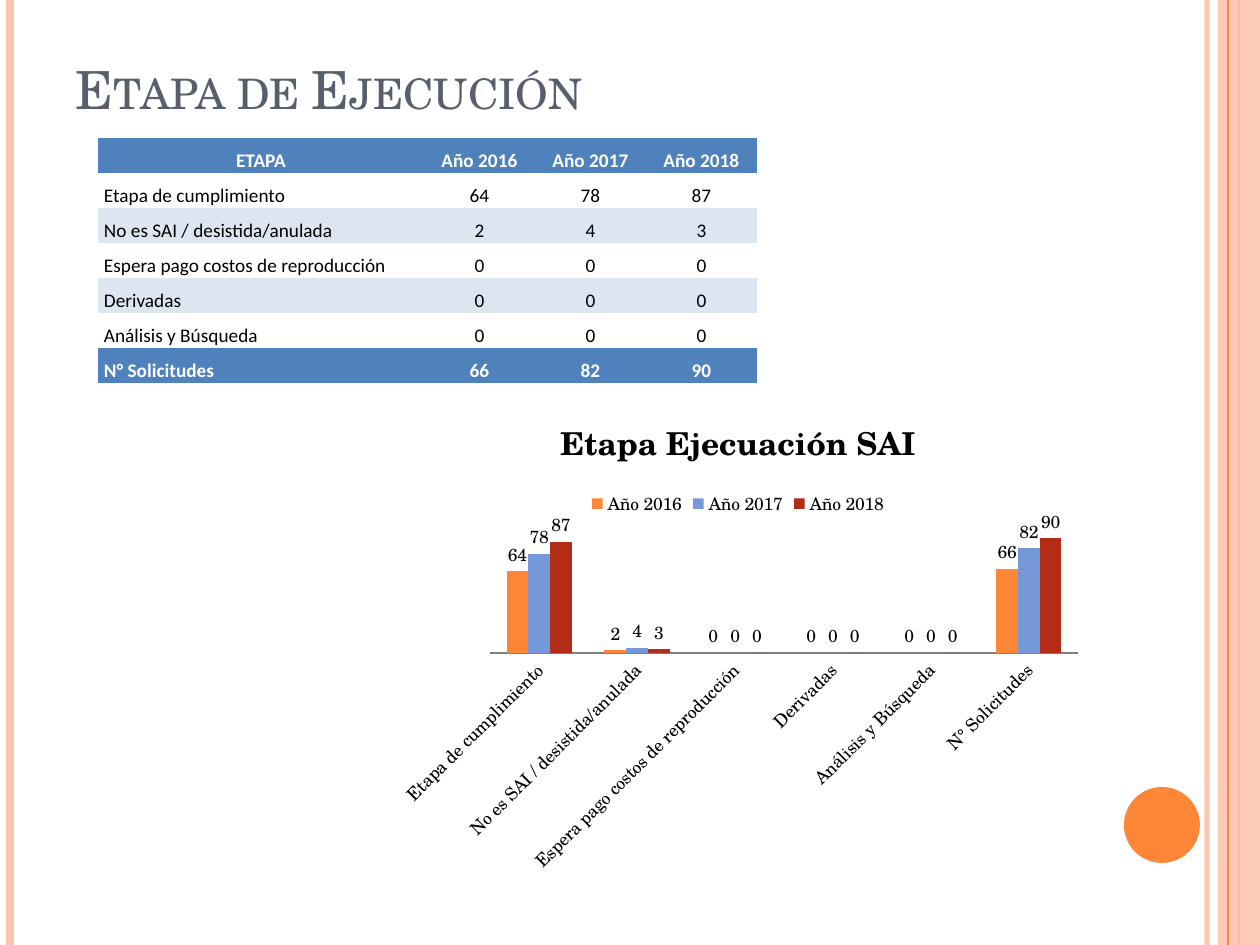
from lxml import etree
from pptx import Presentation, util as u
from pptx.chart.data import CategoryChartData
from pptx.dml.color import RGBColor
from pptx.enum import chart as charts, shapes, text
from pptx.oxml import parse_xml
from pptx.oxml.ns import nsdecls, qn

# Content
TITLE = "Etapa de Ejecución"
CHART_TITLE = "Etapa Ejecuación SAI"
YEARS = ["Año 2016", "Año 2017", "Año 2018"]
STAGES = [
    ("Etapa de cumplimiento", 64, 78, 87),
    ("No es SAI / desistida/anulada", 2, 4, 3),
    ("Espera pago costos de reproducción", 0, 0, 0),
    ("Derivadas", 0, 0, 0),
    ("Análisis y Búsqueda", 0, 0, 0),
    ("N° Solicitudes", 66, 82, 90),
]
SERIF, SANS = "TeX Gyre Schola", "Calibri"
ORANGE, PEACH, BLUE, BAND = "FE8637", "FEC3AE", "4F81BD", "DCE6F1"
SERIES_COLORS = [ORANGE, "7598D9", "B32C16"]
NO_STYLE = "{2D5ABB26-0587-4C30-8999-92F81FD0307C}"

# Geometry in px, 126 to the inch
WIDTH, HEIGHT = 1260, 945
COLUMNS, ROW = [326, 111, 111, 111], 35
CHART = (384, 393, 708, 491)
PLOT = (487, 525, 591, 130)


def px(value):
    return round(value * 914400 / 126)


def color(value):
    return RGBColor.from_string(value)


def set_alpha(element, percent):
    tone = element.find(".//" + qn("a:srgbClr"))
    etree.SubElement(tone, qn("a:alpha")).set("val", str(percent * 1000))


def add_stripe(page, x, tone, points, alpha=100):
    line = page.shapes.add_connector(
        shapes.MSO_CONNECTOR.STRAIGHT, px(x), 0, px(x), px(HEIGHT))
    line.line.color.rgb = color(tone)
    line.line.width = u.Pt(points)
    properties = line._element.spPr
    etree.SubElement(properties, qn("a:effectLst"))
    if alpha < 100:
        set_alpha(properties, alpha)


def add_solid(page, kind, box, tone, alpha=100):
    shape = page.shapes.add_shape(kind, *map(px, box))
    shape.shadow.inherit = False
    shape.fill.solid()
    shape.fill.fore_color.rgb = color(tone)
    shape.line.fill.background()
    if alpha < 100:
        set_alpha(shape._element.spPr, alpha)


def style_font(font, name, size, tone, bold=False):
    font.name, font.size, font.bold = name, u.Pt(size), bold
    font.color.rgb = color(tone)


def add_title(page):
    box = page.shapes.add_textbox(*map(px, (63, 26, 1134, 100)))
    frame = box.text_frame
    frame.word_wrap = True
    frame.vertical_anchor = text.MSO_ANCHOR.BOTTOM
    span = frame.paragraphs[0].add_run()
    span.text = TITLE
    style_font(span.font, SERIF, 30, "575F6D")
    span.font._element.set("cap", "small")


def add_stage_table(page):
    rows = [("ETAPA", *YEARS), *STAGES]
    frame = page.shapes.add_table(
        len(rows), len(COLUMNS), px(98), px(138),
        px(sum(COLUMNS)), px(ROW * len(rows)))
    table = frame.table
    table.first_row = table.horz_banding = False
    table._tbl.tblPr.find(qn("a:tableStyleId")).text = NO_STYLE
    for column, width in zip(table.columns, COLUMNS):
        column.width = px(width)
    for r, values in enumerate(rows):
        table.rows[r].height = px(ROW)
        strong = r in (0, len(rows) - 1)
        for c, value in enumerate(values):
            cell = table.cell(r, c)
            cell.margin_left = cell.margin_right = px(6)
            cell.margin_top = cell.margin_bottom = 0
            cell.vertical_anchor = text.MSO_ANCHOR.BOTTOM
            if strong or r % 2 == 0:
                cell.fill.solid()
                cell.fill.fore_color.rgb = color(BLUE if strong else BAND)
            else:
                cell.fill.background()
            para = cell.text_frame.paragraphs[0]
            para.line_spacing = 1.15
            centred = r == 0 or c > 0
            para.alignment = text.PP_ALIGN.CENTER if centred else text.PP_ALIGN.LEFT
            span = para.add_run()
            span.text = str(value)
            style_font(span.font, SANS, 11, "FFFFFF" if strong else "000000", strong)


def place_plot(chart):
    """Fix the inner plot area as fractions of the chart frame."""
    left, top, width, height = CHART
    x, y, w, h = PLOT
    parts = {"x": (x - left) / width, "y": (y - top) / height,
             "w": w / width, "h": h / height}
    modes = '<c:xMode val="edge"/><c:yMode val="edge"/>'
    sizes = "".join(f'<c:{key} val="{part:.2f}"/>' for key, part in parts.items())
    layout = parse_xml(
        f'<c:layout {nsdecls("c")}><c:manualLayout>'
        f'<c:layoutTarget val="inner"/>{modes}{sizes}'
        '</c:manualLayout></c:layout>')
    area = chart._chartSpace.chart.plotArea
    for old in area.findall(qn("c:layout")):
        area.remove(old)
    area.insert(0, layout)


def add_stage_chart(page):
    data = CategoryChartData()
    data.categories = [stage[0] for stage in STAGES]
    for i, year in enumerate(YEARS, 1):
        data.add_series(year, [stage[i] for stage in STAGES])
    chart = page.shapes.add_chart(
        charts.XL_CHART_TYPE.COLUMN_CLUSTERED, *map(px, CHART), data).chart
    style_font(chart.font, SERIF, 10, "000000")

    chart.has_title = True
    span = chart.chart_title.text_frame.paragraphs[0].add_run()
    span.text = CHART_TITLE
    style_font(span.font, SERIF, 18, "000000", True)
    chart.has_legend = True
    chart.legend.position = charts.XL_LEGEND_POSITION.TOP
    chart.legend.include_in_layout = False

    values, stages = chart.value_axis, chart.category_axis
    values.visible = values.has_major_gridlines = False
    values.minimum_scale, values.maximum_scale = 0, 100
    stages.major_tick_mark = charts.XL_TICK_MARK.NONE
    stages.format.line.color.rgb = color("808080")
    stages.format.line.width = u.Pt(1)
    style_font(stages.tick_labels.font, SERIF, 10, "000000")
    stages._element.find(qn("c:txPr")).find(qn("a:bodyPr")).set("rot", "-2700000")

    plot = chart.plots[0]
    plot.gap_width, plot.overlap, plot.vary_by_categories = 150, 0, False
    for series, tone in zip(plot.series, SERIES_COLORS):
        series.format.fill.solid()
        series.format.fill.fore_color.rgb = color(tone)
        series.invert_if_negative = False
        labels = series.data_labels
        labels.show_value = True
        labels.position = charts.XL_LABEL_POSITION.OUTSIDE_END
        style_font(labels.font, SERIF, 10, "000000")
    place_plot(chart)


def main():
    deck = Presentation()
    deck.slide_width, deck.slide_height = px(WIDTH), px(HEIGHT)
    page = deck.slides.add_slide(deck.slide_layouts[6])

    # Side stripes and corner disc
    add_stripe(page, 1207, PEACH, 3, 93)
    add_stripe(page, 10, PEACH, 4.5)
    add_stripe(page, 1239, ORANGE, 1.5)
    add_solid(page, shapes.MSO_SHAPE.RECTANGLE, (1218, 0, 42, HEIGHT), PEACH, 87)
    add_stripe(page, 1228, ORANGE, 0.75)
    add_solid(page, shapes.MSO_SHAPE.OVAL, (1124, 787, 76, 76), ORANGE)

    add_title(page)
    add_stage_table(page)
    add_stage_chart(page)
    deck.save("out.pptx")


if __name__ == "__main__":
    main()
